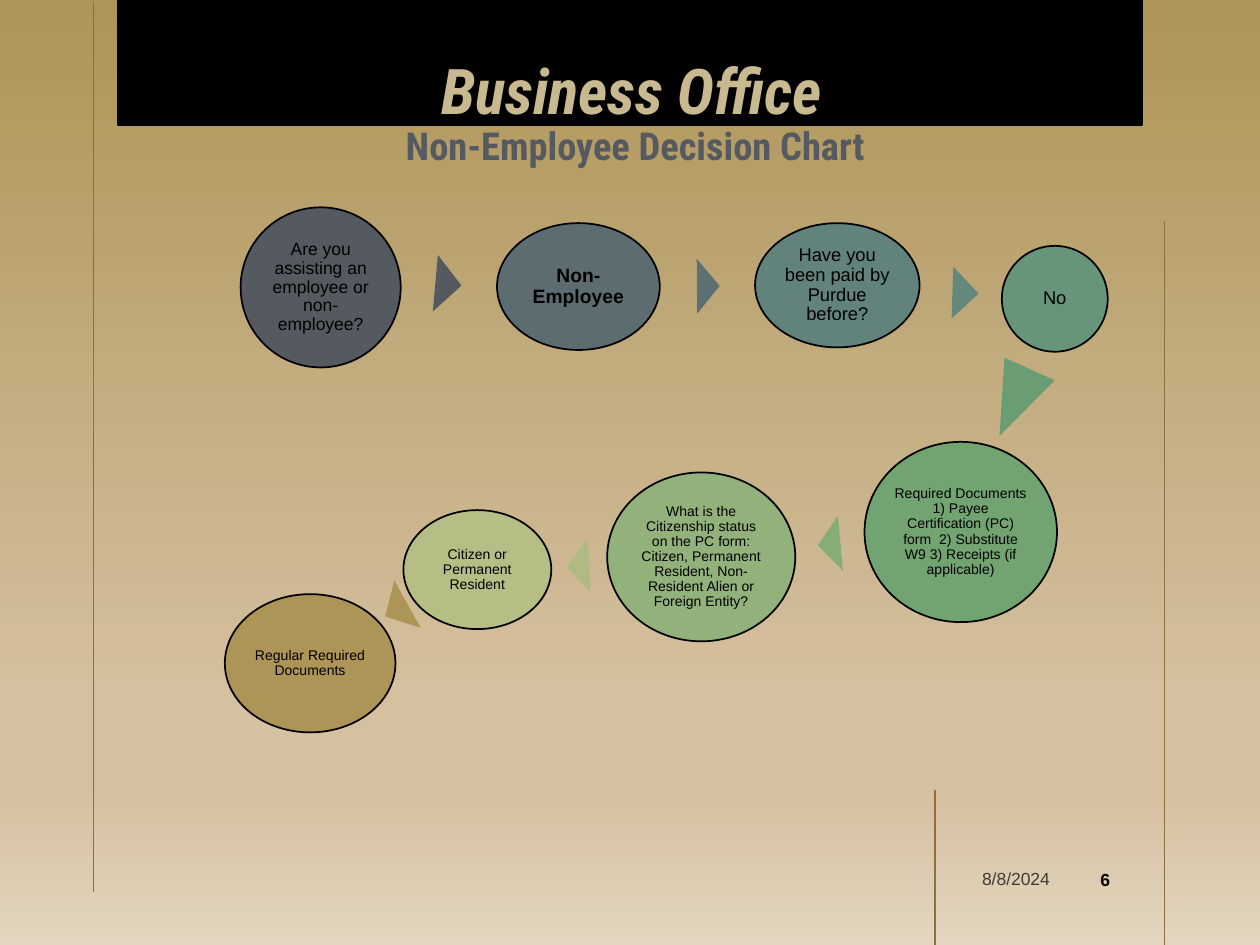
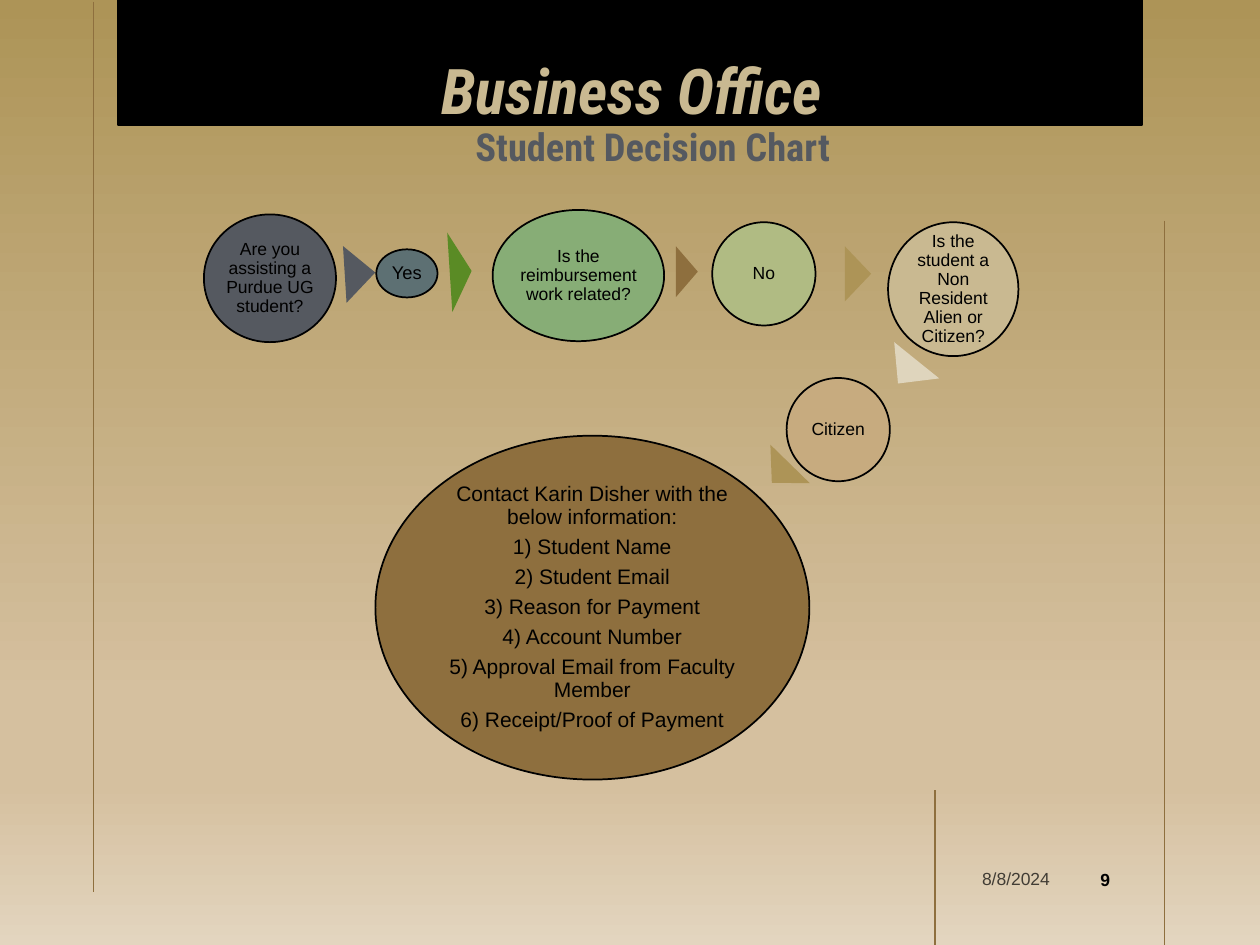
from pptx import Presentation
from pptx.dml.color import RGBColor as Rgb
from pptx.enum.shapes import MSO_CONNECTOR as Link, MSO_SHAPE as Geo
from pptx.enum.text import MSO_ANCHOR as Anchor, MSO_AUTO_SIZE as Fit, PP_ALIGN as Align
from pptx.oxml import parse_xml
from pptx.oxml.ns import nsdecls, qn
from pptx.util import Pt
from lxml import etree

BLACK = Rgb(0x00, 0x00, 0x00)
GOLD = Rgb(0xAD, 0x94, 0x57)
SAND = Rgb(0xD5, 0xC0, 0x9F)
CREAM = Rgb(0xE3, 0xD5, 0xBF)
BROWN = Rgb(0x8E, 0x6F, 0x3E)
TAN = Rgb(0xC9, 0xB9, 0x91)
BUFF = Rgb(0xC7, 0xAB, 0x7F)
PALE = Rgb(0xDF, 0xD5, 0xBD)
STEEL = Rgb(0x55, 0x59, 0x60)
SLATE = Rgb(0x5C, 0x6C, 0x71)
STONE = Rgb(0x5D, 0x70, 0x73)
TEAL = Rgb(0x62, 0x82, 0x7C)
SEA = Rgb(0x64, 0x88, 0x7C)
JADE = Rgb(0x67, 0x95, 0x79)
MINT = Rgb(0x6B, 0x9D, 0x74)
FERN = Rgb(0x71, 0xA4, 0x70)
LEAF = Rgb(0x87, 0xAD, 0x76)
MOSS = Rgb(0x93, 0xB1, 0x7A)
LIME = Rgb(0xB0, 0xBB, 0x83)
PEAR = Rgb(0xB6, 0xBD, 0x85)
GRASS = Rgb(0x5A, 0x8B, 0x25)

FADE = [(0, GOLD), (74, SAND), (83, SAND), (100, CREAM)]
RULES = [(53.5, 1, 510), (534.5, 451.5, 540), (665.5, 126, 540)]  # x, top, end
HEAD, BODY = "Roboto Condensed", "Arial"


class Deck:
    def __init__(self):
        self.prs = Presentation()
        self.prs.slide_width, self.prs.slide_height = Pt(720), Pt(540)
        self.slide = None
        self.paint()

    def paint(self):
        """Give the master its four-stop gradient background."""
        master = self.prs.slide_master
        fill = master.background.fill
        fill.gradient()
        fill.gradient_angle = 270
        stops = master.element.xpath("p:cSld/p:bg//a:gsLst")[0]
        for old in list(stops):
            stops.remove(old)
        for pos, color in FADE:
            stops.append(parse_xml(
                f'<a:gs {nsdecls("a")} pos="{pos * 1000}"><a:srgbClr val="{color}"/></a:gs>'))

    def page(self, title, sub, left, top, num):
        """Start a slide with its band, rules, headings and footer."""
        self.slide = self.prs.slides.add_slide(self.prs.slide_layouts[0])
        self.shape(Geo.RECTANGLE, (67.5, 0, 585, 71.5), BLACK, BLACK)
        for x, start, end in RULES:
            self.rule(x, start, end)
        main, second = self.slide.placeholders
        self.head(main, (88.5, 34.5, 545, 40.5), title, 36, TAN, True)
        self.head(second, (left, top, 545, 26.5), sub, 22, STEEL, False)
        date = self.slide.shapes.add_textbox(Pt(542), Pt(489.5), Pt(65), Pt(25))
        self.text(date.text_frame, ["8/8/2024"], 10, align=Align.RIGHT)
        tint = date.element.xpath(".//a:srgbClr")[0]
        etree.SubElement(tint, qn("a:alpha"), val="70000")
        disc = self.shape(Geo.OVAL, (617, 488, 29, 29))
        self.pad(disc.text_frame, 1.5, 3.5)
        self.text(disc.text_frame, [num], 10, bold=True)

    def head(self, holder, box, text, size, color, slant):
        self.slide.shapes.element.append(holder.element)
        holder.left, holder.top, holder.width, holder.height = map(Pt, box)
        frame = holder.text_frame
        self.pad(frame, 0, 0)
        self.text(frame, [text], size, color, True, HEAD)
        para = frame.paragraphs[0]
        para.runs[0].font.italic = slant
        para.line_spacing, para.space_before = 0.9, Pt(0)
        frame.vertical_anchor = Anchor.TOP
        frame.auto_size = Fit.SHAPE_TO_FIT_TEXT

    def rule(self, x, start, end):
        line = self.slide.shapes.add_connector(
            Link.STRAIGHT, Pt(x), Pt(start), Pt(x), Pt(end))
        line.line.color.rgb, line.line.width = BROWN, Pt(1)
        etree.SubElement(line.element.spPr, qn("a:effectLst"))

    def shape(self, geo, box, fill=None, edge=None):
        item = self.slide.shapes.add_shape(geo, *map(Pt, box))
        item.shadow.inherit = False
        if fill is None:
            item.fill.background()
        else:
            item.fill.solid()
            item.fill.fore_color.rgb = fill
        if edge is None:
            item.line.fill.background()
        else:
            item.line.color.rgb, item.line.width = edge, Pt(1)
        return item

    def pad(self, frame, side, end):
        frame.margin_left = frame.margin_right = Pt(side)
        frame.margin_top = frame.margin_bottom = Pt(end)

    def text(self, frame, lines, size, color=BLACK, bold=False, font=BODY,
             align=Align.CENTER):
        """Fill a frame with one paragraph and run per line."""
        frame.word_wrap = True
        frame.vertical_anchor = Anchor.MIDDLE
        for i, line in enumerate(lines):
            para = frame.add_paragraph() if i else frame.paragraphs[0]
            para.alignment = align
            run = para.add_run()
            run.text = line
            run.font.name, run.font.size, run.font.bold = font, Pt(size), bold
            run.font.color.rgb = color

    def arrow(self, box, turn, color):
        self.shape(Geo.ISOSCELES_TRIANGLE, box, color).rotation = turn

    def step(self, box, color, size, *lines, bold=False):
        frame = self.shape(Geo.OVAL, box, color, BLACK).text_frame
        self.pad(frame, 1, 1)
        self.text(frame, lines, size, bold=bold)
        for para in frame.paragraphs:
            para.line_spacing, para.space_after = 0.9, Pt(0.35 * size)

    def chart(self, arrows, steps):
        for arrow in arrows:
            self.arrow(*arrow)
        for step in steps:
            self.step(*step)


def main():
    deck = Deck()

    deck.page("Business Office", "Non-Employee Decision Chart", 90.5, 72.5, "6")
    deck.chart([
        ((240, 155, 32.5, 15), 95.1, STEEL),
        ((389, 157, 31.5, 13), 89.6, STONE),
        ((537, 160, 29.5, 15), 91.9, SEA),
        ((564, 209, 31.5, 42), 204.2, MINT),
        ((458, 304.5, 31.5, 13), 264.6, LEAF),
        ((314.5, 317, 31.5, 13), 266.6, LIME),
        ((211, 341.5, 31, 14.5), 240.9, GOLD),
    ], [
        ((137.5, 118.5, 91.5, 91.5), STEEL, 10,
         "Are you assisting an employee or non-employee?"),
        ((431.5, 127.5, 94, 71), TEAL, 10.5, "Have you been paid by Purdue before?"),
        ((572.5, 140.5, 60.5, 60.5), JADE, 10.5, "No"),
        ((494, 252.5, 110, 103), FERN, 8,
         "Required Documents 1) Payee Certification (PC) form  2) Substitute W9 "
         "3) Receipts (if applicable)"),
        ((347, 270, 107.5, 96.5), MOSS, 8,
         "What is the Citizenship status on the PC form: Citizen, Permanent Resident, "
         "Non-Resident Alien or Foreign Entity?"),
        ((230.5, 291.5, 84.5, 68), PEAR, 8, "Citizen or Permanent Resident"),
        ((128.5, 339.5, 97.5, 79), GOLD, 8, "Regular Required Documents"),
    ])
    deck.step((284, 127.5, 93, 72.5), SLATE, 11, "Non-Employee", bold=True)

    deck.page("Business Office", "Student Decision Chart", 100.5, 73.5, "9")
    deck.chart([
        ((189.5, 147.5, 32.5, 17.5), 86.4, STEEL),
        ((240.5, 149, 45.5, 12.5), 86.3, GRASS),
        ((378, 149, 29, 12.5), 90, BROWN),
        ((474.5, 149, 31.5, 15), 90, GOLD),
        ((502, 204, 33, 17), 218.8, PALE),
        ((430.5, 263, 31.5, 15), 224.3, GOLD),
    ], [
        ((116.5, 122.5, 75.5, 73), STEEL, 10, "Are you assisting a Purdue UG student?"),
        ((215, 142.5, 35, 27.5), STONE, 10.5, "Yes"),
        ((281.5, 120, 98, 75), LEAF, 10, "Is the reimbursement work related?"),
        ((407, 127, 59, 59), LIME, 10, "No"),
        ((507.5, 127, 74.5, 76.5), TAN, 10,
         "Is the student a Non Resident Alien or Citizen?"),
        ((449.5, 216, 59, 59), BUFF, 10, "Citizen"),
        ((214.5, 249, 248, 196.5), BROWN, 12,
         "Contact Karin Disher with the below information:",
         "1) Student Name", "2) Student Email", "3) Reason for Payment",
         "4) Account Number", "5) Approval Email from Faculty Member",
         "6) Receipt/Proof of Payment"),
    ])
    deck.prs.save("out.pptx")


if __name__ == "__main__":
    main()
